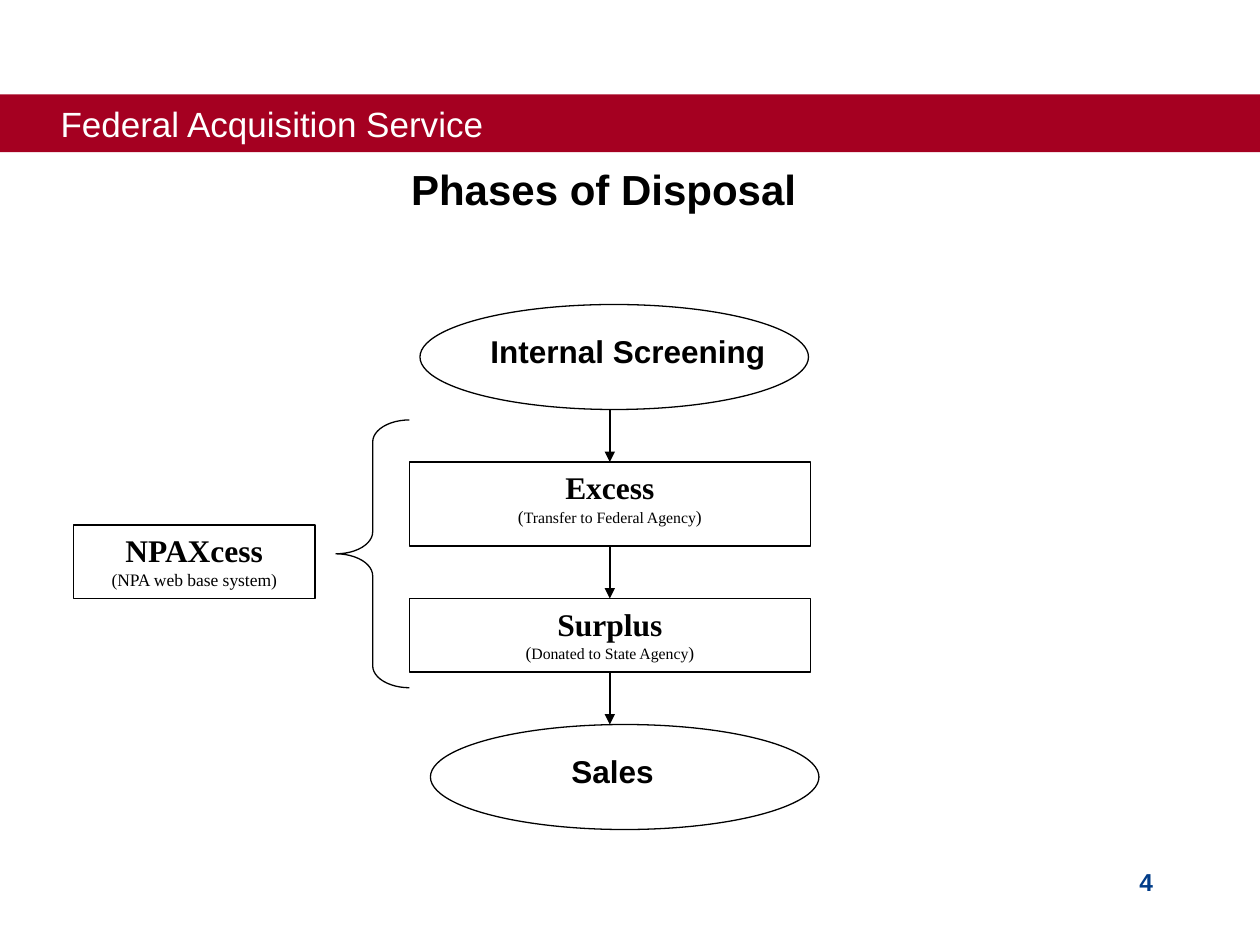
from lxml import etree
from pptx import Presentation
from pptx.dml.color import RGBColor
from pptx.enum.shapes import MSO_CONNECTOR, MSO_SHAPE
from pptx.enum.text import MSO_ANCHOR, PP_ALIGN
from pptx.oxml.ns import qn
from pptx.util import Pt

SANS, SERIF = "Arial", "Times New Roman"
HEADING = {"name": SANS, "size": Pt(18), "bold": True}
BOX_HEADING = {**HEADING, "name": SERIF}
NOTE = {"name": SERIF, "size": Pt(10), "bold": False}
SMALL_NOTE = {**NOTE, "size": Pt(9)}


def rgb(value):
    """Turn a hex string into a colour."""
    return RGBColor.from_string(value)


def write(tf, paragraphs, align=PP_ALIGN.CENTER, color="000000"):
    """Fill a text frame with paragraphs given as lists of (text, format) runs."""
    tf.word_wrap = True
    for i, runs in enumerate(paragraphs):
        p = tf.paragraphs[0] if i == 0 else tf.add_paragraph()
        p.alignment = align
        for text, fmt in runs:
            r = p.add_run()
            r.text = text
            r.font.color.rgb = rgb(color)
            for key, value in fmt.items():
                setattr(r.font, key, value)


def add_outline(s, kind, box, fill=None):
    """Add a preset shape with a thin black outline."""
    sp = s.shapes.add_shape(kind, *map(Pt, box))
    sp.shadow.inherit = False
    if fill:
        sp.fill.solid()
        sp.fill.fore_color.rgb = rgb(fill)
    else:
        sp.fill.background()
    sp.line.color.rgb = rgb("000000")
    sp.line.width = Pt(0.75)
    return sp


def add_label(s, box, text, fmt, **style):
    """Add a one-line text box."""
    sp = s.shapes.add_textbox(*map(Pt, box))
    write(sp.text_frame, [[(text, fmt)]], **style)


def add_banner(s, box, text):
    """Add the red band with the service name."""
    sp = add_outline(s, MSO_SHAPE.RECTANGLE, box, "A50021")
    sp.line.fill.background()
    tf = sp.text_frame
    tf.vertical_anchor = MSO_ANCHOR.MIDDLE
    tf.margin_left = Pt(34.6)
    write(tf, [[(text, {"name": SANS, "size": Pt(20)})]], PP_ALIGN.LEFT, "FFFFFF")


def add_phase_box(s, box, heading, note):
    """Add a white rectangle with a bold heading above a note."""
    sp = add_outline(s, MSO_SHAPE.RECTANGLE, box, "FFFFFF")
    sp.text_frame.vertical_anchor = MSO_ANCHOR.TOP
    write(sp.text_frame, [[(heading, BOX_HEADING)], note])
    return sp


def add_arrow(s, x, top, bottom, start=None, end=None):
    """Add a downward arrow, joined to the boxes it meets."""
    cx = s.shapes.add_connector(MSO_CONNECTOR.STRAIGHT, Pt(x), Pt(top), Pt(x), Pt(bottom))
    if start:
        cx.begin_connect(start, 2)
    if end:
        cx.end_connect(end, 0)
    cx.line.color.rgb = rgb("000000")
    cx.line.width = Pt(0.75)
    etree.SubElement(cx.line._get_or_add_ln(), qn("a:tailEnd"), type="triangle")
    etree.SubElement(cx._element.spPr, qn("a:effectLst"))


def add_flow(s, left, top):
    """Add the four phases from screening to sales, with the arrows between them."""
    width, gap = 229, 30
    oval_w, oval_h = 222, 60
    excess_top = top + oval_h + gap
    surplus_top = excess_top + 48 + gap
    sales_top = surplus_top + 42 + gap
    excess, surplus = (
        add_phase_box(s, (left, y, width, h), heading,
                      [("(", NOTE), (note, SMALL_NOTE), (")", NOTE)])
        for y, h, heading, note in (
            (excess_top, 48, "Excess", "Transfer to Federal Agency"),
            (surplus_top, 42, "Surplus", "Donated to State Agency"),
        )
    )
    for dx, y in ((6, top), (12, sales_top)):
        add_outline(s, MSO_SHAPE.OVAL, (left + dx, y, oval_w, oval_h))
    add_label(s, (left + 24, top + 12, 201.6, 29), "Internal Screening", HEADING)
    add_label(s, (left + 72, sales_top + 12, 88, 29), "Sales", HEADING)
    for end_y, start, end in ((excess_top, None, excess),
                              (surplus_top, excess, surplus),
                              (sales_top, surplus, None)):
        add_arrow(s, left + width / 2, end_y - gap, end_y, start, end)


def add_system(s, left, top):
    """Add the web system box and the brace that ties it to its phases."""
    add_phase_box(s, (left, top + 60, 138, 42), "NPAXcess",
                  [("(NPA web base system)", NOTE)])
    brace = add_outline(s, MSO_SHAPE.LEFT_BRACE, (left + 150, top, 42, 153))
    brace.adjustments[0] = 0.3
    brace.adjustments[1] = 0.5


def main():
    """Build the slide and save it."""
    prs = Presentation()
    prs.slide_width, prs.slide_height = Pt(720), Pt(540)
    s = prs.slides.add_slide(prs.slide_layouts[6])
    add_banner(s, (0, 54, 720, 33), "Federal Acquisition Service")
    add_label(s, (198, 90, 294, 36), "Phases of Disposal", {**HEADING, "size": Pt(24)})
    add_system(s, 42, 240)
    add_flow(s, 234, 174)
    add_label(s, (516, 492, 150, 36), "4", {**HEADING, "size": Pt(14)},
              align=PP_ALIGN.RIGHT, color="013C88")
    prs.save("out.pptx")


if __name__ == "__main__":
    main()
